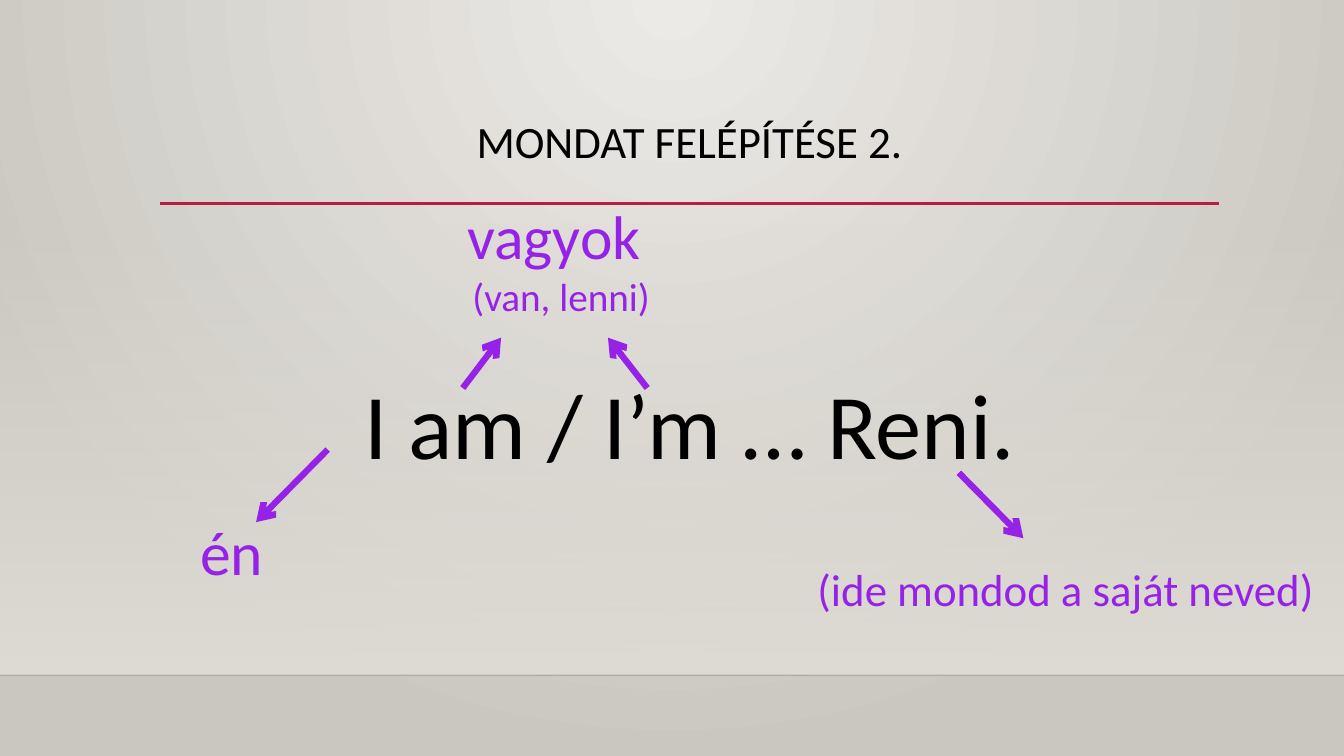
from lxml import etree
from pptx import Presentation
from pptx import util as u
from pptx.dml.color import RGBColor
from pptx.enum import shapes, text
from pptx.oxml import parse_xml
from pptx.oxml.ns import nsdecls, qn

FONT = "Calibri"
PURPLE = "9622E7"
BLACK = "000000"
RED = "B71E42"
SLIDE_WIDTH = 13.33
SLIDE_HEIGHT = 7.5
FLOOR = 6.7


def colour(value):
    return RGBColor.from_string(value)


def place(shape, box):
    shape.left, shape.top, shape.width, shape.height = map(u.Inches, box)


def set_gradient(fill, stops, direction):
    fill.gradient()
    gradient = fill._xPr.find(qn("a:gradFill"))
    stop_xml = "".join(
        f'<a:gs pos="{position * 1000}"><a:srgbClr val="{value}">'
        f'<a:alpha val="{alpha * 1000}"/></a:srgbClr></a:gs>'
        for position, value, alpha in stops
    )
    replacement = parse_xml(
        f'<a:gradFill {nsdecls("a")} rotWithShape="1">'
        f"<a:gsLst>{stop_xml}</a:gsLst>{direction}</a:gradFill>"
    )
    gradient.getparent().replace(gradient, replacement)


def add_line(slide, start, end, line_colour, width, alpha=100, arrow=False):
    points = map(u.Inches, (*start, *end))
    line = slide.shapes.add_connector(shapes.MSO_CONNECTOR.STRAIGHT, *points)
    line.line.width = u.Pt(width)
    line.line.color.rgb = colour(line_colour)
    properties = line.element.spPr
    if alpha < 100:
        value = properties.find(".//" + qn("a:srgbClr"))
        etree.SubElement(value, qn("a:alpha")).set("val", str(alpha * 1000))
    if arrow:
        outline = properties.find(qn("a:ln"))
        etree.SubElement(outline, qn("a:tailEnd")).set("type", "arrow")
    etree.SubElement(properties, qn("a:effectLst"))


def write(shape, content, sizes, text_colour, line_spacing=1.0):
    frame = shape.text_frame
    frame.word_wrap = True
    frame.vertical_anchor = text.MSO_ANCHOR.MIDDLE
    frame.text = content
    paragraph = frame.paragraphs[0]
    paragraph.alignment = text.PP_ALIGN.CENTER
    paragraph.line_spacing = line_spacing
    paragraph.space_before = u.Pt(0)
    for run, size in zip(paragraph.runs, sizes):
        run.font.name = FONT
        run.font.size = u.Pt(size)
        run.font.color.rgb = colour(text_colour)


def add_backdrop(slide, box):
    left, top, width, height = box
    set_gradient(
        slide.background.fill,
        [(0, "ECEAE7", 100), (100, "CAC7C1", 100)],
        '<a:path path="circle"><a:fillToRect l="43000" r="43000" b="100000"/></a:path>',
    )
    wall = slide.shapes.add_shape(shapes.MSO_SHAPE.RECTANGLE, 0, 0, 0, 0)
    place(wall, box)
    wall.shadow.inherit = False
    wall.line.fill.background()
    set_gradient(
        wall.fill,
        [(0, "DFDBD5", 0), (100, "DFDBD5", 100)],
        '<a:lin ang="5400000" scaled="0"/>',
    )
    wall.element.getparent().insert(2, wall.element)
    bottom = top + height
    add_line(slide, (left, bottom), (left + width, bottom), "000001", 1, alpha=20)


def add_title(slide, box):
    left, top, width, height = box
    title = slide.shapes.title
    place(title, box)
    write(title, "MONDAT FELÉPÍTÉSE 2.", [32], BLACK, 0.9)
    title.text_frame.auto_size = text.MSO_AUTO_SIZE.NONE
    rule = top + height - 0.02
    add_line(slide, (left, rule), (left + width, rule), RED, 2.5)


def add_sentence(slide, box):
    body = slide.placeholders[1]
    place(body, box)
    write(body, "I am / I’m … Reni.", [66], BLACK, 1.2)
    body.text_frame.auto_size = text.MSO_AUTO_SIZE.NONE
    properties = body.text_frame.paragraphs[0]._p.get_or_add_pPr()
    properties.set("marL", "0")
    properties.set("indent", "0")
    etree.SubElement(properties, qn("a:buNone"))


def add_note(slide, box, content, sizes, arrows):
    left, top = box[:2]
    note = slide.shapes.add_textbox(*map(u.Inches, box))
    write(note, content, sizes, PURPLE)
    for x1, y1, x2, y2 in arrows:
        start = (left + x1, top + y1)
        end = (left + x2, top + y2)
        add_line(slide, start, end, PURPLE, 4.5, arrow=True)


def build_sentence_slide(presentation):
    slide = presentation.slides.add_slide(presentation.slide_layouts[1])
    add_backdrop(slide, (0, 2.21, SLIDE_WIDTH, FLOOR - 2.21))
    add_title(slide, (1.59, 0.81, 10.5, 1.23))
    add_sentence(slide, (1.59, 2.2, 10.5, 3.77))
    notes = [
        ((1.2, 5.05, 2.2, 0.84), "én", [44], [(2.05, -0.59, 1.34, 0.13)]),
        (
            (3.55, 1.91, 4.03, 1.31),
            "vagyok \v(van, lenni)",
            [44, 28],
            [(1.04, 1.94, 1.42, 1.44), (2.87, 1.94, 2.48, 1.44)],
        ),
        (
            (7.92, 5.52, 5.3, 0.64),
            "(ide mondod a saját neved)",
            [32],
            [(1.59, -0.83, 2.23, -0.18)],
        ),
    ]
    for note in notes:
        add_note(slide, *note)


def main():
    presentation = Presentation()
    presentation.slide_width = u.Inches(SLIDE_WIDTH)
    presentation.slide_height = u.Inches(SLIDE_HEIGHT)
    build_sentence_slide(presentation)
    presentation.save("out.pptx")


if __name__ == "__main__":
    main()
